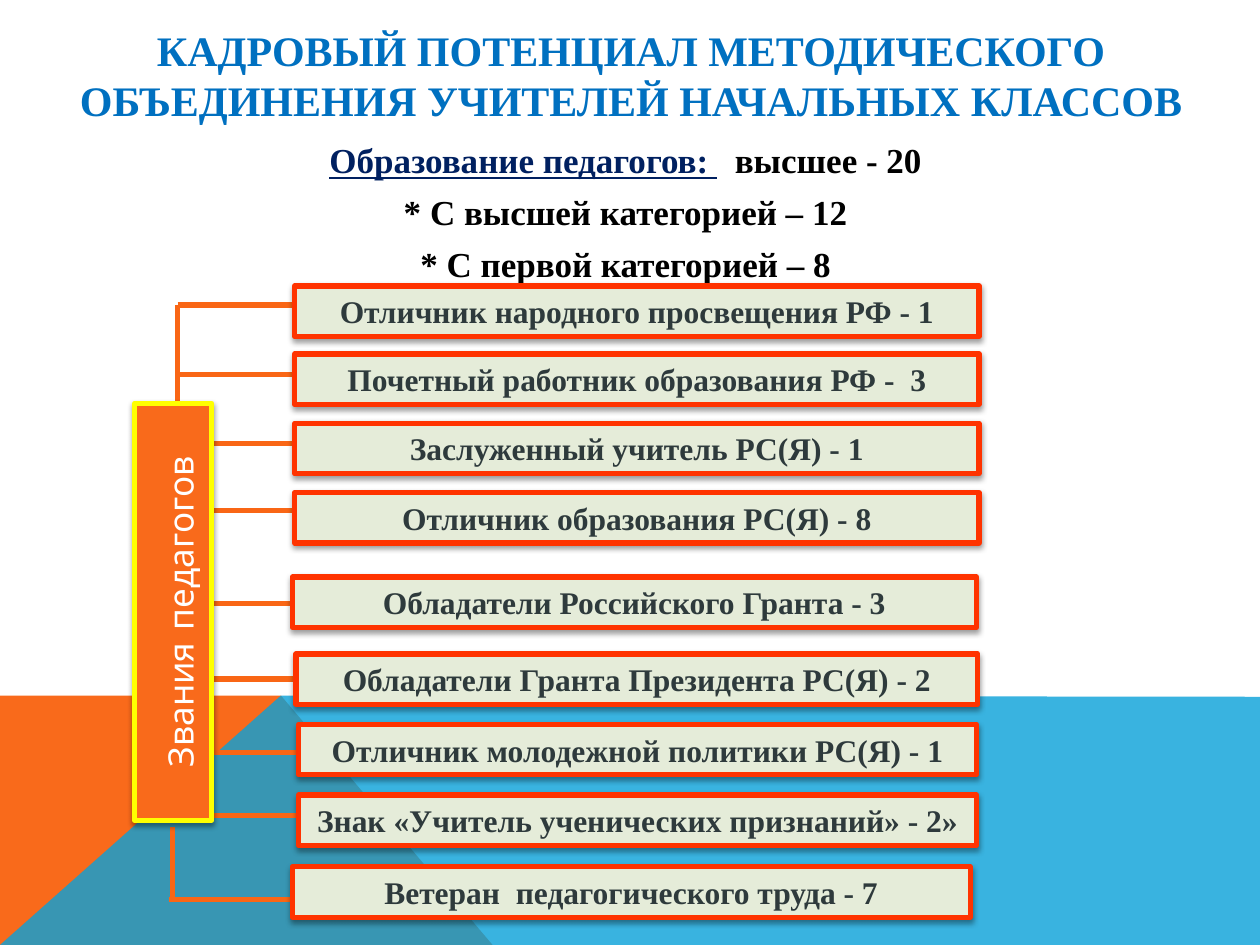
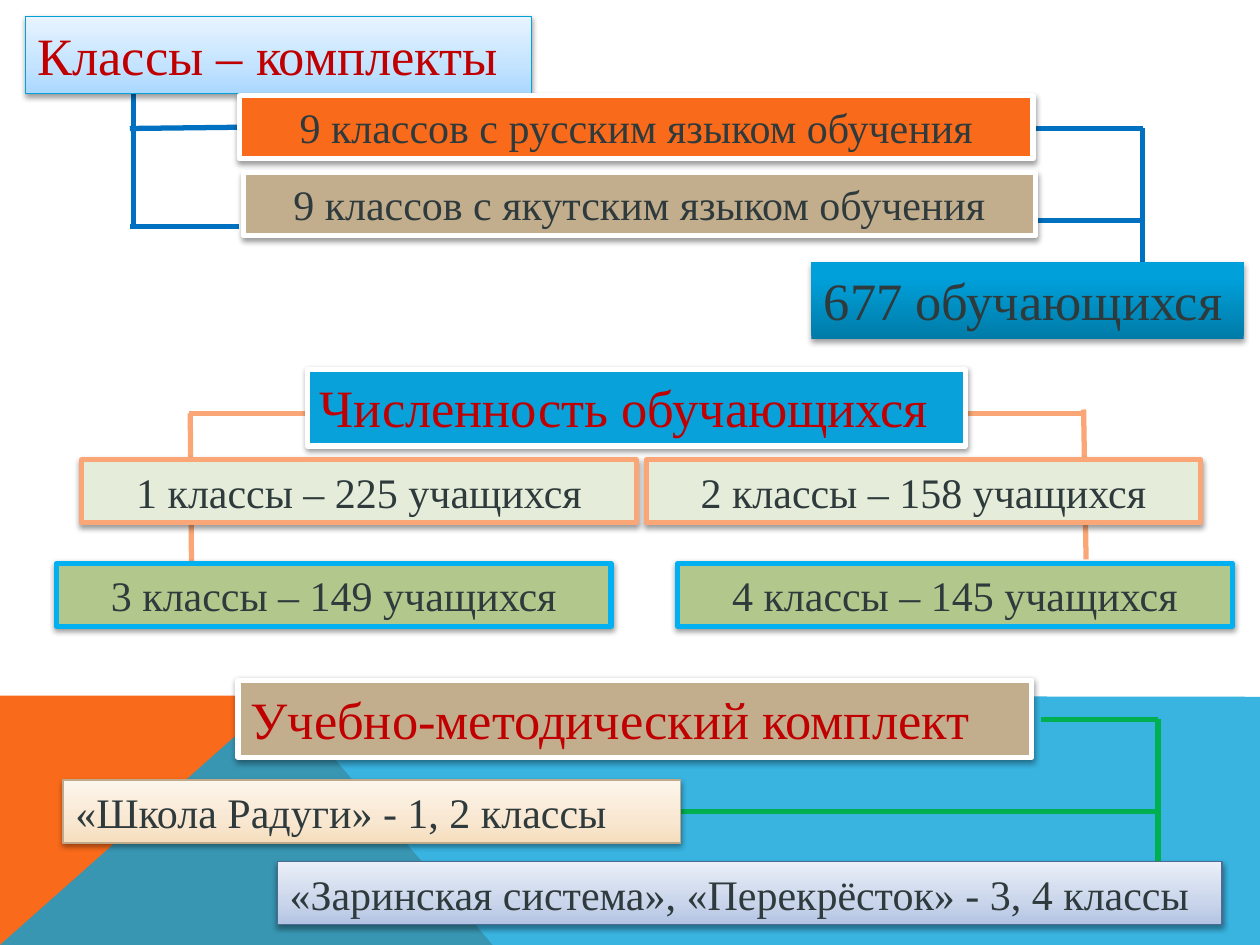
import pptx
import pptx.util
import pptx.dml.color
import pptx.enum.shapes
import pptx.enum.text
import pptx.oxml.ns
from lxml import etree

PX = 9144  # EMU per px, 100 px to the inch
FONT = "Times New Roman"
COLORS = {
    "orange": "F96A1B", "blue": "08A1D9", "title": "0070C0", "navy": "002060",
    "black": "000000", "white": "FFFFFF", "ink": "2E3A3C", "heading": "C00000",
    "rung": "F96615", "red": "FF3300", "yellow": "FFFF00", "pale": "E5ECD9",
    "olive": "B2C78C", "tan": "C2AD8D", "peach": "FBA676", "sky": "00B0F0",
    "green": "00B050", "ice edge": "03A0D9", "cream edge": "BFA989",
    "steel edge": "4D6B92",
}
GRADIENTS = {  # stops from bottom to top: percent, colour
    "ice": [(0, "ABD8FF"), (35, "C3E3FF"), (100, "E8F4FF")],
    "deep": [(0, "007BA8"), (80, "00A0DA"), (100, "00A0DB")],
    "cream": [(0, "F6DEBD"), (35, "F8E7D1"), (100, "FDF6EC")],
    "steel": [(0, "B2C3E3"), (35, "C9D5EA"), (100, "EAEFF8")],
}
ALIGN = pptx.enum.text.PP_ALIGN
ANCHOR = pptx.enum.text.MSO_ANCHOR
FIT = pptx.enum.text.MSO_AUTO_SIZE
qn = pptx.oxml.ns.qn


def px(*values):
    return [pptx.util.Emu(v * PX) for v in values]


def rgb(name):
    return pptx.dml.color.RGBColor.from_string(COLORS[name])


def add_xml(parent, tag, **attrs):
    return etree.SubElement(parent, qn(tag), {k: str(v) for k, v in attrs.items()})


def write(p, text, size=18, color="ink", font=FONT, bold=False, underline=False):
    r = p.add_run()
    r.text = text
    r.font.size = pptx.util.Pt(size)
    r.font.name = font
    r.font.bold = bold
    r.font.underline = underline
    r.font.color.rgb = rgb(color)


class Deck:
    def __init__(self):
        self.prs = pptx.Presentation()
        self.prs.slide_width, self.prs.slide_height = px(1000, 750)
        self.s = None

    def new_slide(self, layout):
        self.s = self.prs.slides.add_slide(self.prs.slide_layouts[layout])
        self.band([(0, 750), (0, 552), (223, 552), (391, 750)], "orange")
        self.band([(0, 750), (223, 552), (1000, 553), (1000, 750)], "blue", 80)

    def band(self, points, color, opacity=100):
        fb = self.s.shapes.build_freeform(*points[0], scale=PX)
        fb.add_line_segments(points[1:], close=True)
        sp = fb.convert_to_shape()
        sp.shadow.inherit = False
        sp.fill.solid()
        sp.fill.fore_color.rgb = rgb(color)
        sp.line.fill.background()
        if opacity < 100:
            clr = sp.element.spPr.find(qn("a:solidFill"))[0]
            add_xml(clr, "a:alpha", val=opacity * 1000)

    def title(self, text, x, y, w, h):
        sp = self.s.shapes.title
        sp.left, sp.top, sp.width, sp.height = px(x, y, w, h)
        tf = sp.text_frame
        tf.auto_size = FIT.NONE
        tf.vertical_anchor = ANCHOR.MIDDLE
        tf.paragraphs[0].alignment = ALIGN.CENTER
        write(tf.paragraphs[0], text, 24, "title", bold=True)

    def body(self, lines, x, y, w, h):
        """Each line is a list of (text, format) runs."""
        tf = self.s.shapes.add_textbox(*px(x, y, w, h)).text_frame
        tf.word_wrap = True
        for i, runs in enumerate(lines):
            p = tf.add_paragraph() if i else tf.paragraphs[0]
            p.alignment = ALIGN.CENTER
            p.line_spacing = 0.9
            p.space_before = pptx.util.Pt(8)
            for text, fmt in runs:
                write(p, text, size=20, bold=True, **fmt)

    def box(self, runs, x, y, w, h, fill, edge=None, edge_pt=3,
            align=ALIGN.CENTER, rotation=0, **fmt):
        """Shadowed rectangle; runs is a text or a list of (text, size)."""
        sp = self.s.shapes.add_shape(
            pptx.enum.shapes.MSO_SHAPE.RECTANGLE, *px(x, y, w, h))
        sp.rotation = rotation
        self.paint(sp, fill)
        if edge:
            sp.line.color.rgb = rgb(edge)
            sp.line.width = pptx.util.Pt(edge_pt)
        else:
            sp.line.fill.background()
        self.shadow(sp)
        tf = sp.text_frame
        tf.word_wrap = True
        tf.auto_size = FIT.SHAPE_TO_FIT_TEXT
        tf.vertical_anchor = ANCHOR.TOP
        p = tf.paragraphs[0]
        p.alignment = align
        if isinstance(runs, str):
            write(p, runs, **fmt)
        else:
            for text, size in runs:
                write(p, text, size, **fmt)

    def paint(self, sp, fill):
        if fill not in GRADIENTS:
            sp.fill.solid()
            sp.fill.fore_color.rgb = rgb(fill)
            return
        sp.fill.gradient()
        sp.fill.gradient_angle = 90
        stops = sp.element.spPr.find(".//" + qn("a:gsLst"))
        for gs in list(stops):
            stops.remove(gs)
        for percent, color in GRADIENTS[fill]:
            gs = add_xml(stops, "a:gs", pos=percent * 1000)
            add_xml(gs, "a:srgbClr", val=color)

    def shadow(self, sp):
        sp.shadow.inherit = False
        effects = sp.element.spPr.find(qn("a:effectLst"))
        outer = add_xml(effects, "a:outerShdw", blurRad=40000, dist=20000,
                        dir=5400000, rotWithShape=0)
        clr = add_xml(outer, "a:srgbClr", val=COLORS["black"])
        add_xml(clr, "a:alpha", val=38000)

    def line(self, x1, y1, x2, y2, color):
        c = self.s.shapes.add_connector(
            pptx.enum.shapes.MSO_CONNECTOR.STRAIGHT, *px(x1, y1, x2, y2))
        c.line.color.rgb = rgb(color)
        c.line.width = pptx.util.Pt(3)
        add_xml(c.element.spPr, "a:effectLst")


def staff_slide(d):
    d.new_slide(5)
    d.title("КАДРОВЫЙ ПОТЕНЦИАЛ МЕТОДИЧЕСКОГО ОБЪЕДИНЕНИЯ УЧИТЕЛЕЙ НАЧАЛЬНЫХ КЛАССОВ",
            51, -3, 900, 125)
    black = {"color": "black"}
    d.body([
        [("Образование педагогов: ", {"color": "navy", "underline": True}),
         ("  высшее - 20", black)],
        [("* С высшей категорией – 12", black)],
        [("* С первой категорией – 8", black)],
    ], 39, 109, 915, 192)

    # Trunk lines above and below the label
    d.line(141, 320, 141, 242, "rung")
    d.line(137, 713, 137, 656, "rung")

    # Honours: text, box left, top, width, then left end and height of its rung
    honours = [
        ("Отличник народного просвещения РФ - 1", 234, 227, 543, 141, 242),
        ("Почетный работник образования РФ -  3", 234, 281, 543, 141, 297),
        ("Заслуженный учитель РС(Я) - 1", 234, 336, 543, 156, 352),
        ("Отличник образования РС(Я) - 8", 234, 391, 543, 138, 405),
        ("Обладатели Российского Гранта - 3", 232, 458, 543, 132, 479),
        ("Обладатели Гранта Президента РС(Я) - 2", 235, 519, 541, 135, 539),
        ("Отличник молодежной политики РС(Я) - 1", 237, 575, 538, 138, 597),
        ("Знак «Учитель ученических признаний» - 2»", 237, 631, 538, 135, 647),
        ("Ветеран  педагогического труда - 7", 232, 688, 538, 134, 714),
    ]
    for text, x, y, w, rung_x, rung_y in honours:
        d.line(rung_x, rung_y, x, rung_y, "rung")
        d.box(text, x, y, w, 40, "pale", "red", bold=True)

    # Vertical label
    d.box([("Звания", 20), (" ", 30), ("педагогов", 20)], -28, 455, 331, 61,
          "orange", "yellow", rotation=270, color="white", font="Karla")


def classes_slide(d):
    d.new_slide(6)
    head = {"size": 30, "color": "heading", "align": ALIGN.LEFT}
    left = {"size": 24, "align": ALIGN.LEFT}

    # Connecting lines by colour
    links = {
        "title": [(106, 73, 106, 180), (907, 102, 907, 208), (190, 180, 103, 180),
                  (190, 101, 103, 102), (907, 102, 820, 102), (908, 175, 821, 175)],
        "peach": [(152, 447, 151, 328), (862, 444, 860, 325),
                  (242, 328, 150, 328), (862, 328, 765, 328)],
        "green": [(919, 571, 826, 571), (919, 644, 539, 644), (919, 684, 919, 571)],
    }
    for color, lines in links.items():
        for ends in lines:
            d.line(*ends, color)

    # Classes by language
    d.box("Классы – комплекты", 20, 13, 402, 61, "ice", "ice edge", 0.75, **head)
    d.box("9 классов с русским языком обучения", 190, 76, 630, 50,
          "orange", "white", size=24)
    d.box("9 классов с якутским языком обучения", 193, 137, 629, 50,
          "tan", "white", size=24)
    d.box("677 обучающихся", 644, 208, 343, 61, "deep", size=30, align=ALIGN.LEFT)

    # Pupils by year
    d.box("Численность обучающихся", 244, 293, 522, 61, "blue", "white", **head)
    years = [(1, 225, 65, 365), (2, 158, 513, 365), (3, 149, 45, 447), (4, 145, 538, 447)]
    for year, pupils, x, y in years:
        fill, edge = ("pale", "peach") if year < 3 else ("olive", "sky")
        d.box(f"{year} классы – {pupils} учащихся", x, y, 440, 50, fill, edge, size=24)

    # Teaching kits
    d.box("Учебно-методический комплект", 189, 540, 630, 61, "tan", "white", **head)
    d.box("«Школа Радуги» - 1, 2 классы", 50, 619, 490, 50,
          "cream", "cream edge", 0.75, **left)
    d.box("«Заринская система», «Перекрёсток» - 3, 4 классы", 220, 684, 750, 50,
          "steel", "steel edge", 0.75, **left)


def main():
    d = Deck()
    staff_slide(d)
    classes_slide(d)
    d.prs.save("out.pptx")


if __name__ == "__main__":
    main()
